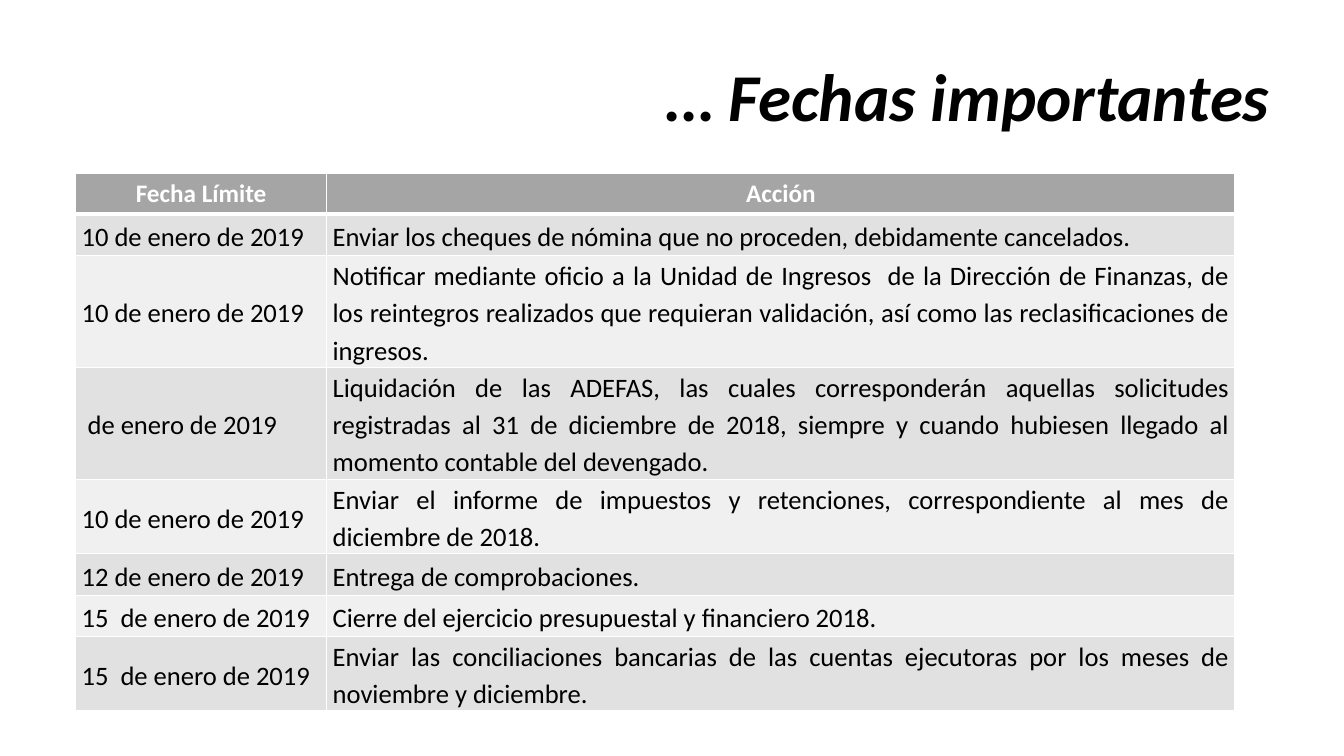
from lxml.etree import SubElement
from pptx import Presentation
from pptx.dml.color import RGBColor
from pptx.enum.text import MSO_ANCHOR, MSO_AUTO_SIZE, PP_ALIGN
from pptx.oxml.ns import qn
from pptx.util import Inches, Pt

TITLE = "… Fechas importantes"
HEADERS = ("Fecha Límite", "Acción")
DEADLINES = [
    ("10 de enero de 2019", "Enviar los cheques de nómina que no proceden, debidamente cancelados.", 1),
    ("10 de enero de 2019", "Notificar mediante oficio a la Unidad de Ingresos  de la Dirección de Finanzas, de los reintegros realizados que requieran validación, así como las reclasificaciones de ingresos.", 3),
    (" de enero de 2019", "Liquidación de las ADEFAS, las cuales corresponderán aquellas solicitudes registradas al 31 de diciembre de 2018, siempre y cuando hubiesen llegado al momento contable del devengado.", 3),
    ("10 de enero de 2019", "Enviar el informe de impuestos y retenciones, correspondiente al mes de diciembre de 2018.", 2),
    ("12 de enero de 2019", "Entrega de comprobaciones.", 1),
    ("15  de enero de 2019", "Cierre del ejercicio presupuestal y financiero 2018.", 1),
    ("15  de enero de 2019", "Enviar las conciliaciones bancarias de las cuentas ejecutoras por los meses de noviembre y diciembre.", 2),
]

THEME = {
    "title": {"name": "Calibri", "size": Pt(47.8), "bold": True, "italic": True, "color": "000000"},
    "header": {"name": "Calibri", "size": Pt(18), "bold": True, "color": "FFFFFF"},
    "body": {"name": "Calibri", "size": Pt(19), "bold": False, "color": "000000"},
    "header_fill": "A5A5A5",
    "bands": ("E1E1E1", "F0F0F0"),
    "border": "FFFFFF",
}
TITLE_BOX = {"left": Inches(-0.18), "top": Inches(0.26), "width": Inches(12.87), "height": Inches(1.46)}
CELL_FORMAT = {
    "vertical_anchor": MSO_ANCHOR.MIDDLE,
    "margin_left": Inches(0.06), "margin_right": Inches(0.06),
    "margin_top": 0, "margin_bottom": 0,
}
COLUMN_WIDTHS = (2.49, 9.01)
BODY_ALIGNMENTS = (PP_ALIGN.LEFT, PP_ALIGN.JUSTIFY)
HEADER_HEIGHT = 0.4
ROW_HEIGHT = 0.41
LINE_HEIGHT = 0.37


def apply(target, values):
    for name, value in values.items():
        setattr(target, name, value)


def write(text_frame, text, style, alignment, line_spacing):
    paragraph = text_frame.paragraphs[0]
    apply(paragraph, {"alignment": alignment, "line_spacing": line_spacing})
    run = paragraph.add_run()
    run.text = text
    apply(run.font, {key: value for key, value in style.items() if key != "color"})
    run.font.color.rgb = RGBColor.from_string(style["color"])


def paint(cell, fill, top_width, bottom_width):
    properties = cell._tc.get_or_add_tcPr()
    for side, width in (("L", 1), ("R", 1), ("T", top_width), ("B", bottom_width)):
        line = SubElement(properties, qn(f"a:ln{side}"), w=str(Pt(width)))
        solid = SubElement(line, qn("a:solidFill"))
        SubElement(solid, qn("a:srgbClr"), val=THEME["border"])
    cell.fill.solid()
    cell.fill.fore_color.rgb = RGBColor.from_string(fill)


def add_title(slide):
    title = slide.shapes.title
    apply(title, TITLE_BOX)
    apply(title.text_frame, {
        "word_wrap": True, "auto_size": MSO_AUTO_SIZE.NONE, "vertical_anchor": MSO_ANCHOR.MIDDLE,
    })
    write(title.text_frame, TITLE, THEME["title"], PP_ALIGN.RIGHT, 0.9)


def add_deadlines(slide):
    heights = [HEADER_HEIGHT] + [max(ROW_HEIGHT, LINE_HEIGHT * lines) for _, _, lines in DEADLINES]
    table = slide.shapes.add_table(
        len(heights), len(HEADERS), Inches(0.75), Inches(1.72),
        Inches(sum(COLUMN_WIDTHS)), Inches(sum(heights)),
    ).table
    for column, width in zip(table.columns, COLUMN_WIDTHS):
        column.width = Inches(width)
    for row, height in zip(table.rows, heights):
        row.height = Inches(height)
    for column, heading in enumerate(HEADERS):
        cell = table.cell(0, column)
        paint(cell, THEME["header_fill"], 1, 3)
        write(cell.text_frame, heading, THEME["header"], PP_ALIGN.CENTER, 1.0)
    for row, (date, action, _) in enumerate(DEADLINES, 1):
        for column, text in enumerate((date, action)):
            cell = table.cell(row, column)
            apply(cell, CELL_FORMAT)
            paint(cell, THEME["bands"][(row - 1) % 2], 3 if row == 1 else 1, 1)
            write(cell.text_frame, text, THEME["body"], BODY_ALIGNMENTS[column], 1.15)


def main():
    presentation = Presentation()
    apply(presentation, {"slide_width": Inches(13.33), "slide_height": Inches(7.5)})
    slide = presentation.slides.add_slide(presentation.slide_layouts[5])
    add_deadlines(slide)
    add_title(slide)
    presentation.save("out.pptx")


if __name__ == "__main__":
    main()
